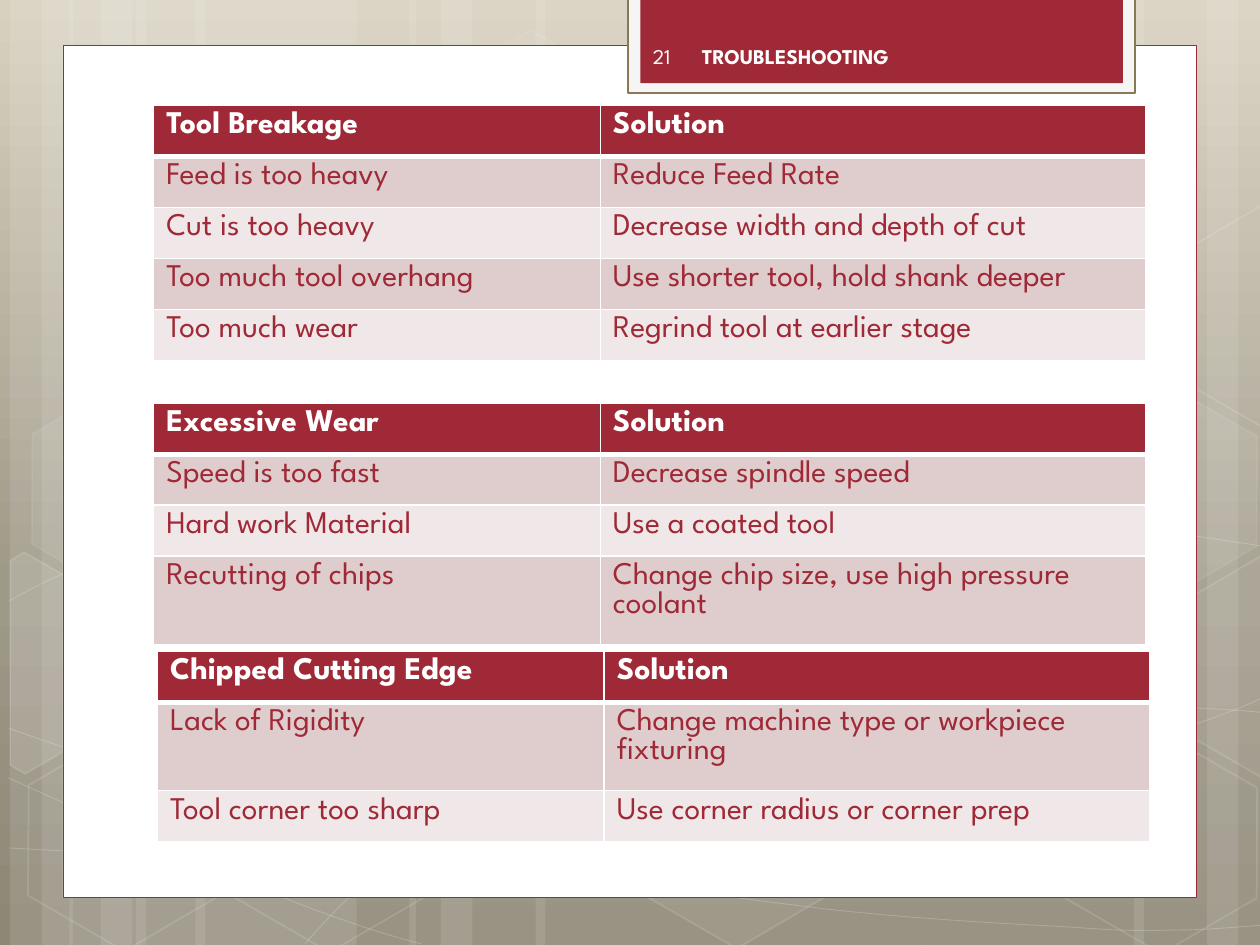
from math import cos, radians, sin
from typing import NamedTuple, Optional
from lxml.etree import SubElement as Sub
from pptx import Presentation
from pptx.dml.color import RGBColor as Rgb
from pptx.enum.shapes import MSO_SHAPE as Kind
from pptx.enum.text import MSO_ANCHOR as Anchor
from pptx.oxml import parse_xml
from pptx.oxml.ns import qn, nsdecls
from pptx.util import Inches, Pt

# The slide is a grid of 100 columns by 75 rows
COLS, ROWS = 100, 75
UNIT = Inches(10) // COLS
FONT = "League Spartan"
TILT = 30
INK = {
    "white": "FFFFFF", "red": "9F2936", "frame": "F5F5F5", "edge": "887952",
    "label": "FEFEFE", "odd": "DFCDCE", "even": "F0E8E8",
    "top": "D8D1C0", "mid": "9F9988", "low": "8E8776",
}


class Box(NamedTuple):
    x: float
    y: float
    w: float
    h: float


class Hex(NamedTuple):
    x: float
    y: float
    fill: int  # opacity in percent, 0 for none
    line: int


class Cut(NamedTuple):
    """A tilted hexagon cut off by the slide's edge."""
    mid: tuple
    pts: list
    fill: int


class Grid(NamedTuple):
    x: float
    y: float
    rows: list


# Background art
STRIPES = [(10.8, 17.5), (0.8, 5), (3.3, 8.3), (15.5, 17.5), (5.5, 5), (8, 8.3),
           (73.3, 17.5), (95.8, 5), (90, 8.3), (42.5, 30.8), (32.5, 5), (35, 8.3)]
# Each curve: a start, then two handles and an end per stretch
CURVES = [
    [(0.7, 67.3), (6.1, 67.6), (11.5, 67.9), (19, 67.8), (26.5, 67.7), (35.8, 67.5),
     (45.8, 66.5), (55.8, 65.5), (70, 63.6), (79.2, 61.7), (88.3, 59.8), (97.7, 56.8),
     (100.7, 55.1)],
    [(0.7, 47.7), (3.6, 46.1), (6.5, 44.6), (12.1, 43.1), (17.8, 41.6), (25.9, 39.4),
     (34.7, 38.7), (43.6, 38), (54.4, 37.9), (65.4, 38.7), (76.4, 39.5), (94.7, 42.6),
     (100.7, 43.4)],
    [(0.6, 61.7), (12.7, 67.2), (24.7, 72.7), (33.4, 74.9)],
    [(0.7, 57.8), (3.8, 58.9), (7, 60), (12.8, 61.6), (18.6, 63.1), (27.3, 65.6),
     (35.7, 67.3), (44, 69), (54.5, 70.8), (62.8, 71.8), (71.1, 72.9), (80, 73.3),
     (85.3, 73.6), (90.5, 74), (91.9, 73.8), (94.5, 73.8), (97.1, 73.7), (98.9, 73.5),
     (100.7, 73.4)],
    [(24.2, 74.9), (26, 72.9), (27.8, 70.9), (30.2, 69.1), (32.6, 67.3), (36, 65.3),
     (38.8, 63.9), (41.6, 62.5), (43.3, 61.9), (47, 60.9), (50.6, 59.9), (57.3, 58.5),
     (60.8, 57.8), (64.4, 57.1), (64.9, 57.1), (68, 56.9), (71.1, 56.6), (76, 56.3),
     (79.4, 56.2), (82.9, 56.1), (88.6, 56.2), (88.6, 56.2), (90.8, 56.2), (93.1, 56.2),
     (95.3, 56.2), (97.1, 56.3), (98.8, 56.4), (99.7, 56.5), (100.6, 56.6), (100.3, 56.5),
     (100.6, 56.6)],
]
HEXES = [Hex(33.4, 3.6, 4, 8), Hex(49.7, 58.9, 6, 12), Hex(1.1, 59.1, 0, 12),
         Hex(1.4, 31.2, 7, 8), Hex(17.4, 59.2, 0, 12), Hex(75.3, 45.3, 10, 12),
         Hex(83.4, 59.3, 0, 12), Hex(83.4, 31.4, 7, 8)]
CUTS = [
    Cut((3.6, 53.5), [(0.8, 44.5), (1.9, 43.8), (9.6, 48.2), (9.5, 57), (2, 61.4),
                      (0.8, 60.7)], 10),
    Cut((98.5, 52), [(92.6, 48.5), (100.1, 44.1), (100.9, 44.6), (100.9, 61.3),
                     (100.2, 61.7), (92.6, 57.3)], 4),
    Cut((98.5, 24.1), [(92.6, 20.7), (100.1, 16.3), (101, 16.8), (100.9, 33.5),
                       (100.2, 33.9), (92.6, 29.5)], 0),
]

# Tables
WIDTHS = (35.45, 43.3)
HIGH = 4.05
GRIDS = [
    Grid(12.2, 8.38, [
        ("Tool Breakage", "Solution"),
        ("Feed is too heavy", "Reduce Feed Rate"),
        ("Cut is too heavy", "Decrease width and depth of cut"),
        ("Too much tool overhang", "Use shorter tool, hold shank deeper"),
        ("Too much wear", "Regrind tool at earlier stage")]),
    Grid(12.2, 32, [
        ("Excessive Wear", "Solution"),
        ("Speed is too fast", "Decrease spindle speed"),
        ("Hard work Material", "Use a coated tool"),
        ("Recutting of chips", "Change chip size, use high pressure coolant")]),
    Grid(12.5, 51.7, [
        ("Chipped Cutting Edge", "Solution"),
        ("Lack of Rigidity", "Change machine type or workpiece fixturing"),
        ("Tool corner too sharp", "Use corner radius or corner prep")]),
]


def span(*vals: float) -> list:
    return [round(v * UNIT) for v in vals]


def fade(fill, pct: int) -> None:
    """Paint a fill white at the given opacity."""
    if not pct:
        fill.background()
        return
    fill.solid()
    fill.fore_color.rgb = Rgb.from_string(INK["white"])
    tone = fill._xPr.find(qn("a:solidFill"))[0]
    Sub(tone, qn("a:alpha"), val=str(pct * 1000))


def ghost(shape, fill: int, line: int = 0, wide: float = 1) -> None:
    shape.shadow.inherit = False
    fade(shape.fill, fill)
    fade(shape.line.fill, line)
    if line:
        shape.line.width = Pt(wide)


def trace(slide, pts: list, close: bool):
    first, *rest = [span(*p) for p in pts]
    pen = slide.shapes.build_freeform(*first)
    pen.add_line_segments(rest, close=close)
    return pen.convert_to_shape()


def bend(shape) -> None:
    """Merge each three straight segments into one cubic curve."""
    legs = list(shape._element.iter(qn("a:lnTo")))
    for i in range(0, len(legs), 3):
        trio = legs[i:i + 3]
        curve = Sub(trio[0].getparent(), qn("a:cubicBezTo"))
        for leg in trio:
            curve.append(leg[0])
            leg.getparent().remove(leg)


def turn(pts: list, mid: tuple, deg: float) -> list:
    c, s = cos(radians(deg)), sin(radians(deg))
    return [(mid[0] + (x - mid[0]) * c - (y - mid[1]) * s,
             mid[1] + (x - mid[0]) * s + (y - mid[1]) * c) for x, y in pts]


def panel(slide, box: Box, fill: str, edge: Optional[str] = None, wide: float = 0) -> None:
    rect = slide.shapes.add_shape(Kind.RECTANGLE, *span(*box))
    rect.shadow.inherit = False
    rect.fill.solid()
    rect.fill.fore_color.rgb = Rgb.from_string(INK[fill])
    if edge:
        rect.line.color.rgb = Rgb.from_string(INK[edge])
        rect.line.width = Pt(wide)
    else:
        rect.line.fill.background()


def style(part, size: int, ink: str, bold: bool) -> None:
    font = part.font
    font.name, font.size, font.bold = FONT, Pt(size), bold
    font.color.rgb = Rgb.from_string(INK[ink])


def label(slide, box: Box, text: str, bold: bool) -> None:
    frame = slide.shapes.add_textbox(*span(*box)).text_frame
    frame.word_wrap, frame.vertical_anchor = True, Anchor.MIDDLE
    frame.text = text
    style(frame.paragraphs[0], 12, "label", bold)


def border(cell, row: int) -> None:
    wide = {"L": 1, "R": 1, "T": 3 if row == 1 else 1, "B": 1 if row else 3}
    for i, (side, pts) in enumerate(wide.items()):
        cell._tc.get_or_add_tcPr().insert(i, parse_xml(
            f'<a:ln{side} {nsdecls("a")} w="{Pt(pts)}"><a:solidFill>'
            f'<a:srgbClr val="{INK["white"]}"/></a:solidFill></a:ln{side}>'))


def table(slide, grid: Grid) -> None:
    size = span(grid.x, grid.y, sum(WIDTHS), HIGH * len(grid.rows))
    body = slide.shapes.add_table(len(grid.rows), len(WIDTHS), *size).table
    for col, wide in zip(body.columns, span(*WIDTHS)):
        col.width = wide
    for r, texts in enumerate(grid.rows):
        for c, text in enumerate(texts):
            cell = body.cell(r, c)
            cell.text = text
            # Row heights follow the font of the run
            style(cell.text_frame.paragraphs[0].runs[0], 18, "red" if r else "white", r == 0)
            cell.fill.solid()
            tone = ("even", "odd")[r % 2] if r else "red"
            cell.fill.fore_color.rgb = Rgb.from_string(INK[tone])
            border(cell, r)


def backdrop(slide) -> None:
    fill = slide.background.fill
    fill.gradient()
    fill.gradient_angle = 270
    stops = fill._fill._gradFill.find(qn("a:gsLst"))
    for old in list(stops):
        stops.remove(old)
    for pos, ink in ((0, "top"), (62, "mid"), (100, "low")):
        stop = Sub(stops, qn("a:gs"), pos=str(pos * 1000))
        Sub(stop, qn("a:srgbClr"), val=INK[ink])
    for x, wide in STRIPES:
        ghost(slide.shapes.add_shape(Kind.RECTANGLE, *span(x, 0, wide, ROWS)), 10)
    for pts in CURVES:
        shape = trace(slide, pts, False)
        bend(shape)
        ghost(shape, 0, 20, 0.5)
    for item in HEXES:
        shape = slide.shapes.add_shape(Kind.HEXAGON, *span(item.x, item.y, 17.5, 15.2))
        shape.adjustments[0], shape.adjustments[1] = 0.285, 1.155
        shape.rotation = TILT
        ghost(shape, item.fill, item.line)
    for cut in CUTS:
        shape = trace(slide, turn(cut.pts, cut.mid, -TILT), True)
        shape.rotation = TILT
        ghost(shape, cut.fill, 12)


def main() -> None:
    deck = Presentation()
    deck.slide_width, deck.slide_height = span(COLS, ROWS)
    slide = deck.slides.add_slide(deck.slide_layouts[6])
    backdrop(slide)
    # Page and title tab
    panel(slide, Box(5, 3.6, 90, 67.65), "white", "red", 0.5)
    panel(slide, Box(49.85, -0.2, 40.2, 7.6), "frame", "edge", 1.25)
    panel(slide, Box(50.83, -0.2, 38.3, 6.8), "red")
    label(slide, Box(50.83, 2.45, 14.6, 4), "21", False)
    label(slide, Box(54.73, 2.45, 33.1, 4), "TROUBLESHOOTING", True)
    for grid in GRIDS:
        table(slide, grid)
    deck.save("out.pptx")


if __name__ == "__main__":
    main()
